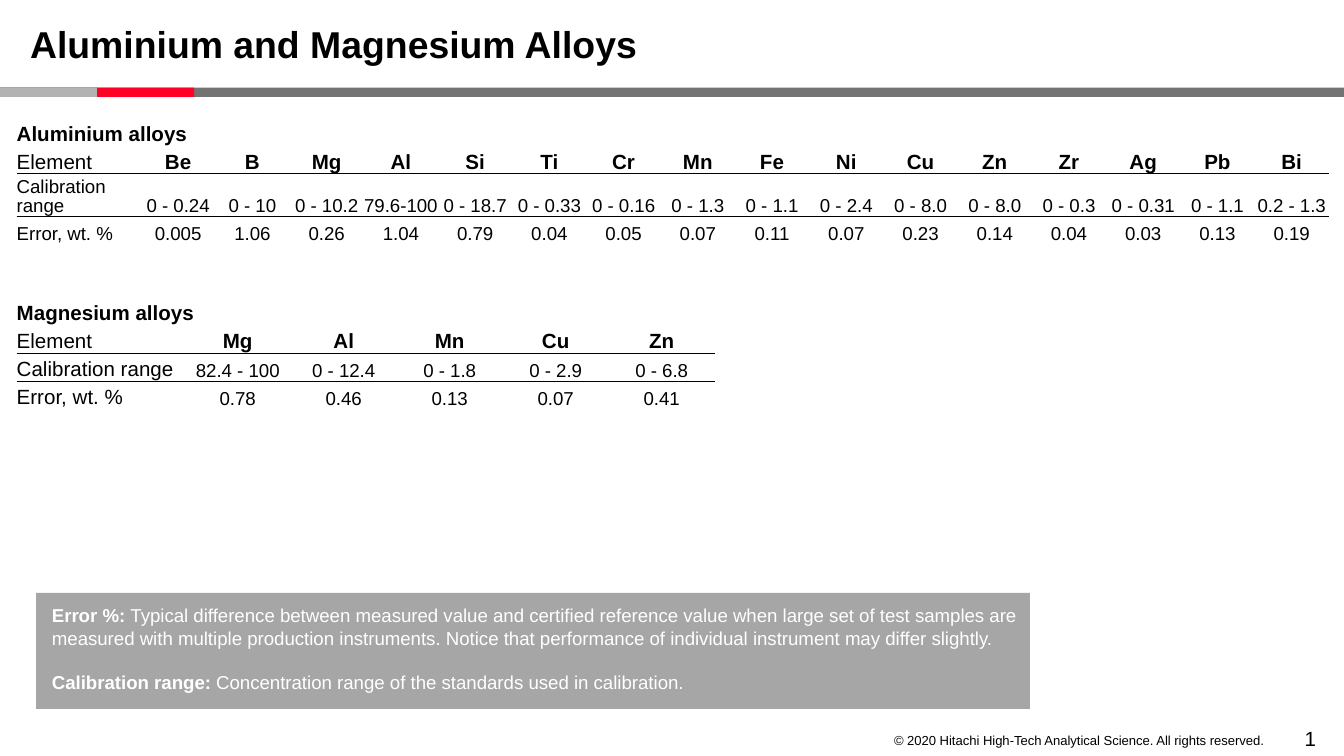
from lxml import etree
from pptx import Presentation
from pptx.dml.color import RGBColor
from pptx.enum.shapes import MSO_SHAPE
from pptx.enum.text import MSO_ANCHOR, MSO_AUTO_SIZE, PP_ALIGN
from pptx.oxml.ns import qn
from pptx.util import Pt

RECTANGLE = MSO_SHAPE.RECTANGLE
LEFT, CENTER, RIGHT = PP_ALIGN.LEFT, PP_ALIGN.CENTER, PP_ALIGN.RIGHT
TOP, MIDDLE, BOTTOM = MSO_ANCHOR.TOP, MSO_ANCHOR.MIDDLE, MSO_ANCHOR.BOTTOM
NO_AUTOFIT = MSO_AUTO_SIZE.NONE

BLACK = RGBColor(0x00, 0x00, 0x00)
WHITE = RGBColor(0xFF, 0xFF, 0xFF)
DARK_GRAY = RGBColor(0x73, 0x73, 0x73)
LIGHT_GRAY = RGBColor(0xB3, 0xB3, 0xB3)
NOTE_GRAY = RGBColor(0xA6, 0xA6, 0xA6)
RED = RGBColor(0xFF, 0x00, 0x26)

FONT = "Arial"
NO_STYLE = "{2D5ABB26-0587-4C30-8999-92F81FD0307C}"
TABLE_LEFT = 8.95
ROW_HEIGHT = 15

# Content
TITLE = "Aluminium and Magnesium Alloys"
COPYRIGHT = "© 2020 Hitachi High-Tech Analytical Science. All rights reserved."
PAGE_NUMBER = "1"

ALLOY_TABLES = [
    {
        "heading": "Aluminium alloys",
        "rows": [
            ["Element", "Be", "B", "Mg", "Al", "Si", "Ti", "Cr", "Mn", "Fe",
             "Ni", "Cu", "Zn", "Zr", "Ag", "Pb", "Bi"],
            ["Calibration range", "0 - 0.24", "0 - 10", "0 - 10.2", "79.6-100",
             "0 - 18.7", "0 - 0.33", "0 - 0.16", "0 - 1.3", "0 - 1.1",
             "0 - 2.4", "0 - 8.0", "0 - 8.0", "0 - 0.3", "0 - 0.31",
             "0 - 1.1", "0.2 - 1.3"],
            ["Error, wt. %", "0.005", "1.06", "0.26", "1.04", "0.79", "0.04",
             "0.05", "0.07", "0.11", "0.07", "0.23", "0.14", "0.04", "0.03",
             "0.13", "0.19"],
        ],
        "top": 62.8, "label_width": 66.6, "value_width": 39.78,
        "label_size": 10, "range_height": 23, "heading_span": 16,
    },
    {
        "heading": "Magnesium alloys",
        "rows": [
            ["Element", "Mg", "Al", "Mn", "Cu", "Zn"],
            ["Calibration range", "82.4 - 100", "0 - 12.4", "0 - 1.8",
             "0 - 2.9", "0 - 6.8"],
            ["Error, wt. %", "0.78", "0.46", "0.13", "0.07", "0.41"],
        ],
        "top": 159.1, "label_width": 90, "value_width": 56.8,
        "label_size": 11, "range_height": ROW_HEIGHT, "heading_span": 6,
    },
]

NOTES = [
    ("Error %: ",
     "Typical difference between measured value and certified reference value "
     "when large set of test samples are measured with multiple production "
     "instruments. Notice that performance of individual instrument may "
     "differ slightly."),
    ("Calibration range:",
     " Concentration range of the standards used in calibration."),
]

# Width and colour of the header bar's layers, back to front
BAR_LAYERS = [(720, DARK_GRAY), (104, RED), (52, LIGHT_GRAY)]


def style_font(font, size, bold=False, color=BLACK):
    font.name = FONT
    font.size = Pt(size)
    font.bold = bold
    font.color.rgb = color


def write_line(text_frame, text, size, bold=False, alignment=LEFT):
    text_frame.text = text
    paragraph = text_frame.paragraphs[0]
    paragraph.alignment = alignment
    paragraph.line_spacing = 0.9
    for run in paragraph.runs:
        style_font(run.font, size, bold)


def add_rectangle(slide, left, top, width, height, color):
    shape = slide.shapes.add_shape(
        RECTANGLE, Pt(left), Pt(top), Pt(width), Pt(height))
    shape.shadow.inherit = False
    shape.fill.solid()
    shape.fill.fore_color.rgb = color
    shape.line.fill.background()
    return shape


def add_footer(slide, text, left, top, width, height, size):
    box = slide.shapes.add_textbox(Pt(left), Pt(top), Pt(width), Pt(height))
    text_frame = box.text_frame
    text_frame.word_wrap = False
    text_frame.vertical_anchor = MIDDLE
    text_frame.margin_top = text_frame.margin_bottom = 0
    write_line(text_frame, text, size, alignment=RIGHT)


def set_border(cell, tag):
    line = etree.Element(qn(tag), w=str(Pt(0.5)))
    fill = etree.SubElement(line, qn("a:solidFill"))
    etree.SubElement(fill, qn("a:srgbClr"), val=str(BLACK))
    cell._tc.get_or_add_tcPr().insert(0, line)


def add_alloy_table(slide, alloy):
    rows = [[alloy["heading"]]] + alloy["rows"]
    heights = [ROW_HEIGHT, ROW_HEIGHT, alloy["range_height"], ROW_HEIGHT]
    value_count = len(rows[1]) - 1
    widths = [alloy["label_width"]] + [alloy["value_width"]] * value_count
    table = slide.shapes.add_table(
        len(rows), len(widths), Pt(TABLE_LEFT), Pt(alloy["top"]),
        Pt(sum(widths)), Pt(sum(heights))).table
    table.first_row = table.horz_banding = False
    table._tbl.tblPr.find(qn("a:tableStyleId")).text = NO_STYLE
    for column, width in zip(table.columns, widths):
        column.width = Pt(width)
    for row, height in zip(table.rows, heights):
        row.height = Pt(height)

    for row_index in range(len(rows)):
        for column_index in range(len(widths)):
            cell = table.cell(row_index, column_index)
            cell.fill.background()
            cell.vertical_anchor = BOTTOM
            cell.margin_left = cell.margin_right = 0
            cell.margin_top = cell.margin_bottom = 0
            is_label = column_index == 0
            if row_index < 2:
                size = 11
            else:
                size = alloy["label_size"] if is_label else 10
            text = ""
            if column_index < len(rows[row_index]):
                text = rows[row_index][column_index]
            bold = row_index == 0 or (row_index == 1 and not is_label)
            write_line(cell.text_frame, text, size, bold,
                       LEFT if is_label else CENTER)
            if not text:
                style_font(cell.text_frame.paragraphs[0].font, size)
            # Rule between the elements and their values
            if row_index == 1:
                set_border(cell, "a:lnB")
            elif row_index == 2:
                set_border(cell, "a:lnT")
    table.cell(0, 0).merge(table.cell(0, alloy["heading_span"] - 1))


def add_notes_box(slide):
    box = add_rectangle(slide, 19.3, 317.6, 532.5, 62.2, NOTE_GRAY)
    text_frame = box.text_frame
    text_frame.word_wrap = True
    text_frame.vertical_anchor = TOP
    text_frame.margin_left, text_frame.margin_top = Pt(8.5), Pt(6)
    text_frame.margin_right = text_frame.margin_bottom = 0
    for index, (term, meaning) in enumerate(NOTES):
        if index == 0:
            paragraph = text_frame.paragraphs[0]
        else:
            paragraph = text_frame.add_paragraph()
            paragraph.space_before = Pt(12)
        paragraph.alignment = LEFT
        for text, bold in ((term, True), (meaning, False)):
            run = paragraph.add_run()
            run.text = text
            style_font(run.font, 10, bold, WHITE)


def main():
    presentation = Presentation()
    presentation.slide_width, presentation.slide_height = Pt(720), Pt(405)
    slide = presentation.slides.add_slide(presentation.slide_layouts[5])

    # Title
    title = slide.shapes.title
    title.left, title.top = Pt(8.9), Pt(10.4)
    title.width, title.height = Pt(590), Pt(28.8)
    title.text_frame.auto_size = NO_AUTOFIT
    title.text_frame.vertical_anchor = MIDDLE
    write_line(title.text_frame, TITLE, 20, bold=True)

    # Header bar
    for width, color in BAR_LAYERS:
        add_rectangle(slide, 0, 46.9, width, 5.1, color)

    # Tables and notes
    for alloy in ALLOY_TABLES:
        add_alloy_table(slide, alloy)
    add_notes_box(slide)

    # Footer
    add_footer(slide, COPYRIGHT, 467.5, 389.5, 216.7, 15.1, 7)
    add_footer(slide, PAGE_NUMBER, 674, 387.4, 38.2, 18, 11)

    presentation.save("out.pptx")


if __name__ == "__main__":
    main()
